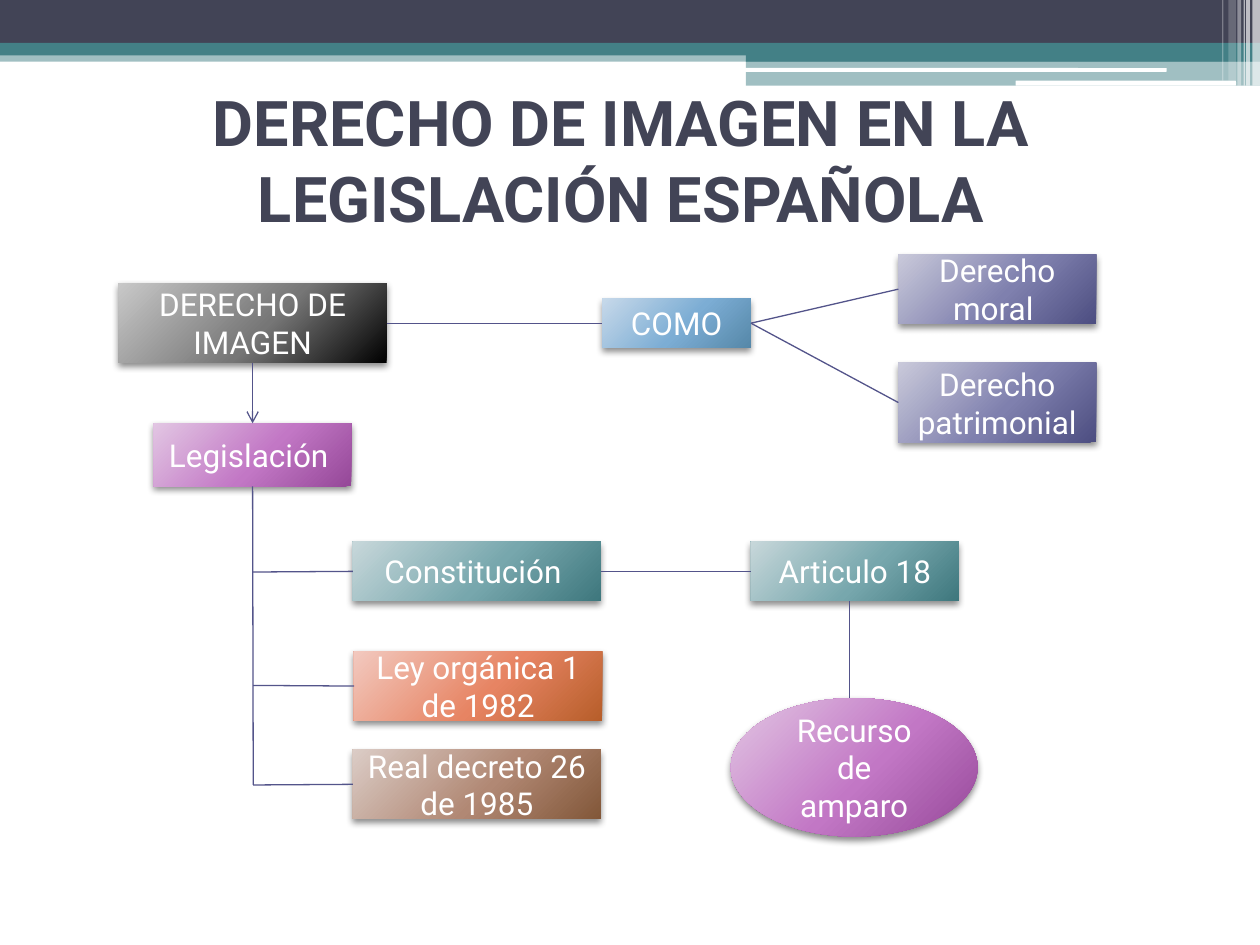
from lxml import etree
from pptx import Presentation
from pptx.dml.color import RGBColor
from pptx.enum.shapes import MSO_CONNECTOR, MSO_SHAPE
from pptx.enum.text import MSO_ANCHOR, PP_ALIGN
from pptx.oxml.ns import qn
from pptx.util import Inches, Pt

RECTANGLE = MSO_SHAPE.RECTANGLE
ROUNDED = MSO_SHAPE.ROUNDED_RECTANGLE
OVAL = MSO_SHAPE.OVAL
STRAIGHT = MSO_CONNECTOR.STRAIGHT
MIDDLE = MSO_ANCHOR.MIDDLE
CENTER = PP_ALIGN.CENTER
TOP, LEFT, BOTTOM, RIGHT = range(4)

NAVY, TEAL, WHITE, INDIGO = "424456", "438086", "FFFFFF", "53548A"
TEAL_SHADES = ("C7D7DA", "77A7AD", "3E777D")
ORANGE_SHADES = ("F2C9BF", "E78463", "B75E2A")
BROWN_SHADES = ("DBCCC6", "B18874", "825739")
BLACK_SHADES = ("C8C8C8", "767676", "000000")
BLUE_SHADES = ("C7D9EA", "7CADD4", "5688A9")
INDIGO_SHADES = ("C9C9DA", "7F80AE", "4D4E81")
PURPLE_SHADES = ("E2C6E3", "C277C5", "954898")


def write_text(shape, text, size, color, bold=False):
    frame = shape.text_frame
    frame.word_wrap = True
    frame.vertical_anchor = MIDDLE
    paragraph = frame.paragraphs[0]
    paragraph.alignment = CENTER
    run = paragraph.add_run()
    run.text = text
    run.font.name = "Roboto"
    run.font.size = Pt(size)
    run.font.bold = bold
    run.font.color.rgb = RGBColor.from_string(color)


def add_node(text, preset, left, top, width, height, shades):
    shape = slide.shapes.add_shape(
        preset, Inches(left), Inches(top), Inches(width), Inches(height))
    shape.line.fill.background()
    shape.shadow.inherit = False
    properties = shape._element.spPr
    gradient = etree.Element(qn("a:gradFill"), rotWithShape="1")
    stops = etree.SubElement(gradient, qn("a:gsLst"))
    for position, shade in zip((0, 55000, 100000), shades):
        stop = etree.SubElement(stops, qn("a:gs"), pos=str(position))
        etree.SubElement(stop, qn("a:srgbClr"), val=shade)
    circle = etree.SubElement(gradient, qn("a:path"), path="circle")
    etree.SubElement(circle, qn("a:fillToRect"),
                     l="-40000", t="-90000", r="140000", b="190000")
    properties.insert(2, gradient)
    shadow = etree.SubElement(
        properties.find(qn("a:effectLst")), qn("a:outerShdw"),
        blurRad=str(Pt(4)), dist=str(Pt(2)), dir="5400000", rotWithShape="0")
    shadow_color = etree.SubElement(shadow, qn("a:srgbClr"), val="000000")
    etree.SubElement(shadow_color, qn("a:alpha"), val="45000")
    write_text(shape, text, 18, WHITE)
    return shape


presentation = Presentation()
presentation.slide_width = Inches(10)
presentation.slide_height = Inches(7.5)
slide = presentation.slides.add_slide(presentation.slide_layouts[6])

bands = [
    (RECTANGLE, 0, 0.4, 10, 0.09, TEAL, 50),
    (RECTANGLE, 0, 0, 10, 0.34, NAVY, 100),
    (RECTANGLE, 0, 0.34, 10, 0.1, TEAL, 100),
    (RECTANGLE, 5.92, 0.39, 4.08, 0.1, TEAL, 100),
    (RECTANGLE, 5.92, 0.48, 4.08, 0.2, TEAL, 50),
    (ROUNDED, 5.91, 0.54, 3.35, 0.03, WHITE, 100),
    (ROUNDED, 8.06, 0.64, 1.75, 0.04, WHITE, 100),
    (RECTANGLE, 9.94, 0, 0.06, 0.68, WHITE, 65),
    (RECTANGLE, 9.89, 0, 0.03, 0.68, WHITE, 65),
    (RECTANGLE, 9.87, 0, 0.01, 0.68, WHITE, 60),
    (RECTANGLE, 9.82, 0, 0.03, 0.68, WHITE, 40),
    (RECTANGLE, 9.75, 0, 0.06, 0.64, WHITE, 20),
    (RECTANGLE, 9.7, 0, 0.01, 0.64, WHITE, 30),
]
for preset, left, top, width, height, color, opacity in bands:
    band = slide.shapes.add_shape(
        preset, Inches(left), Inches(top), Inches(width), Inches(height))
    band.shadow.inherit = False
    band.line.fill.background()
    band.fill.solid()
    band.fill.fore_color.rgb = RGBColor.from_string(color)
    if opacity < 100:
        fill_color = band._element.spPr.find(qn("a:solidFill"))[0]
        etree.SubElement(fill_color, qn("a:alpha"), val=str(opacity * 1000))

title = slide.shapes.add_textbox(Inches(0.43), Inches(0.68), Inches(9), Inches(1.17))
write_text(title, "DERECHO DE IMAGEN EN LA LEGISLACIÓN ESPAÑOLA", 36, NAVY, True)

constitution = add_node("Constitución ", RECTANGLE, 2.8, 4.3, 1.97, 0.47, TEAL_SHADES)
organic_law = add_node("Ley orgánica 1 de 1982", RECTANGLE, 2.81, 5.17, 1.97, 0.55, ORANGE_SHADES)
article = add_node("Articulo 18", RECTANGLE, 5.96, 4.3, 1.65, 0.47, TEAL_SHADES)
decree = add_node("Real decreto 26 de 1985", RECTANGLE, 2.8, 5.95, 1.97, 0.55, BROWN_SHADES)
image_right = add_node("DERECHO DE IMAGEN", RECTANGLE, 0.94, 2.25, 2.13, 0.63, BLACK_SHADES)
kind = add_node("COMO", RECTANGLE, 4.78, 2.37, 1.18, 0.39, BLUE_SHADES)
moral = add_node("Derecho moral ", RECTANGLE, 7.13, 2.02, 1.57, 0.55, INDIGO_SHADES)
patrimonial = add_node("Derecho patrimonial", RECTANGLE, 7.13, 2.88, 1.57, 0.63, INDIGO_SHADES)
legislation = add_node("Legislación ", RECTANGLE, 1.22, 3.36, 1.57, 0.5, PURPLE_SHADES)

links = [
    (2.01, 2.88, 2.01, 3.36, (image_right, BOTTOM), (legislation, TOP)),
    (2.01, 3.86, 2.01, 6.23, (legislation, BOTTOM), None),
    (2.01, 6.23, 2.8, 6.23, None, (decree, LEFT)),
    (2.01, 5.44, 2.81, 5.44, None, (organic_law, LEFT)),
    (2.01, 4.54, 2.8, 4.54, None, (constitution, LEFT)),
    (4.77, 4.54, 5.96, 4.54, (constitution, RIGHT), (article, LEFT)),
    (3.07, 2.57, 4.78, 2.57, (image_right, RIGHT), (kind, LEFT)),
    (5.96, 2.57, 7.13, 2.29, (kind, RIGHT), (moral, LEFT)),
    (5.96, 2.57, 7.13, 3.2, (kind, RIGHT), (patrimonial, LEFT)),
    (6.74, 4.77, 6.74, 5.56, None, None),
]
for start_x, start_y, end_x, end_y, start, end in links:
    connector = slide.shapes.add_connector(
        STRAIGHT, Inches(start_x), Inches(start_y), Inches(end_x), Inches(end_y))
    connector.line.color.rgb = RGBColor.from_string(INDIGO)
    connector.line.width = Pt(0.75)
    if start:
        connector.begin_connect(*start)
    if end:
        connector.end_connect(*end)
    if end == (legislation, TOP):
        etree.SubElement(connector.line._get_or_add_ln(), qn("a:tailEnd"), type="arrow")
    etree.SubElement(connector._element.spPr, qn("a:effectLst"))

add_node("Recurso de amparo", OVAL, 5.8, 5.54, 1.96, 1.1, PURPLE_SHADES)

presentation.save("out.pptx")
